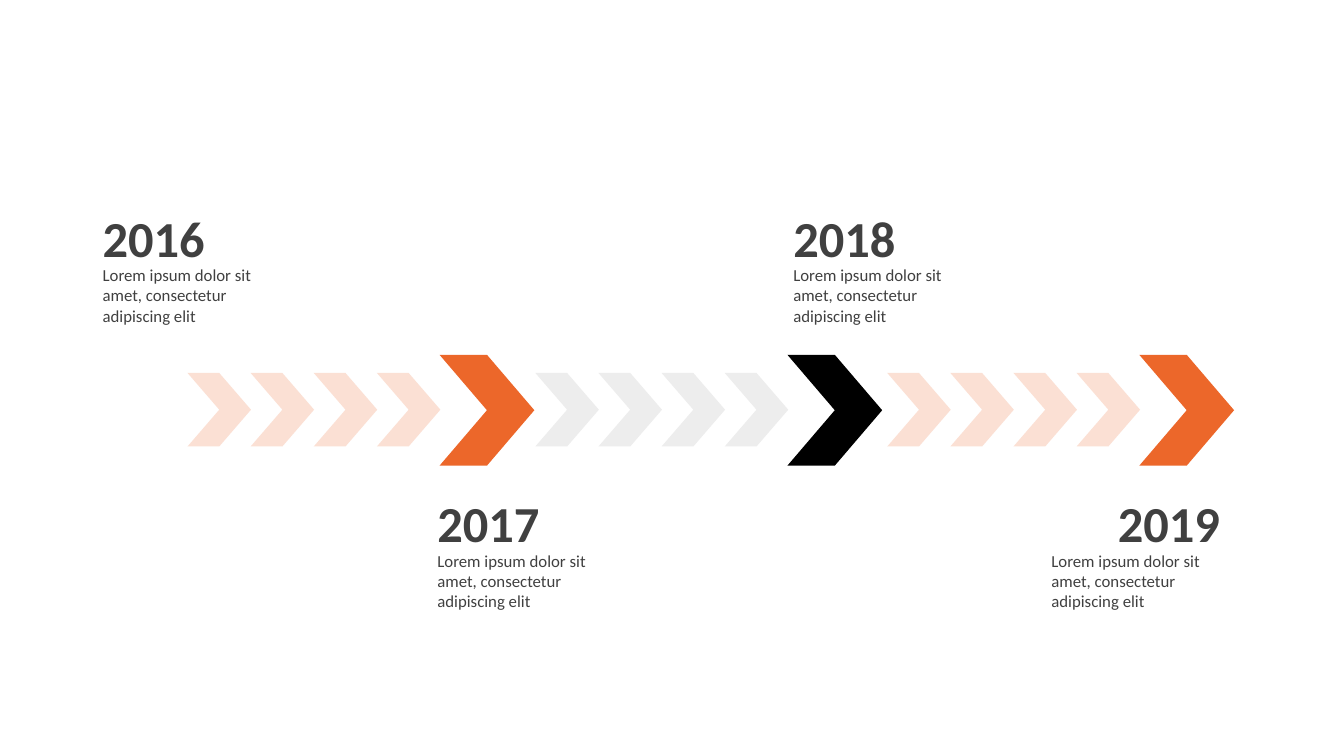
from lxml import etree
from pptx import Presentation
from pptx.dml.color import RGBColor
from pptx.enum import shapes, text
from pptx.oxml.ns import qn
from pptx.util import Inches, Pt

ORANGE = RGBColor(0xEC, 0x67, 0x2A)
BLACK = RGBColor(0x00, 0x00, 0x00)
GRAY = RGBColor(0xED, 0xED, 0xED)
DARK = RGBColor(0x40, 0x40, 0x40)
DESCRIPTION = "Lorem ipsum dolor sit amet, consectetur adipiscing elit"
STEP = 0.626

presentation = Presentation()
presentation.slide_width = Inches(13.33)
presentation.slide_height = Inches(7.5)
slide = presentation.slides.add_slide(presentation.slide_layouts[6])


def add_chevron(left, top, width, height, color, opacity=100):
    shape = slide.shapes.add_shape(
        shapes.MSO_SHAPE.CHEVRON, Inches(left), Inches(top), Inches(width), Inches(height)
    )
    shape.shadow.inherit = False
    shape.line.fill.background()
    shape.fill.solid()
    shape.fill.fore_color.rgb = color
    if opacity < 100:
        color_element = shape.fill._xPr.find(qn("a:solidFill"))[0]
        etree.SubElement(color_element, qn("a:alpha")).set("val", str(opacity * 1000))


def add_label(left, top, wording, size, bold, anchor, alignment):
    box = slide.shapes.add_textbox(Inches(left), Inches(top), Inches(1.87), Inches(0.71))
    frame = box.text_frame
    frame.text = wording
    frame.word_wrap = True
    frame.auto_size = text.MSO_AUTO_SIZE.SHAPE_TO_FIT_TEXT
    frame.vertical_anchor = anchor
    paragraph = frame.paragraphs[0]
    paragraph.alignment = alignment
    font = paragraph.runs[0].font
    font.name = "Calibri"
    font.size = Pt(size)
    font.bold = bold
    font.color.rgb = DARK


stages = [
    (1.86, 4.36, ORANGE, 20, ORANGE),
    (5.31, 7.81, GRAY, 100, BLACK),
    (8.8, 11.3, ORANGE, 20, ORANGE),
]
for small_left, large_left, small_color, opacity, large_color in stages:
    for index in range(4):
        add_chevron(small_left + index * STEP, 3.7, 0.63, 0.73, small_color, opacity)
    add_chevron(large_left, 3.52, 0.94, 1.1, large_color)

milestones = [
    ("2016", 0.92, 2, text.PP_ALIGN.LEFT),
    ("2017", 4.24, 4.83, text.PP_ALIGN.LEFT),
    ("2018", 7.77, 2, text.PP_ALIGN.LEFT),
    ("2019", 10.33, 4.83, text.PP_ALIGN.RIGHT),
]
for year, left, top, alignment in milestones:
    add_label(left, top, year, 36, True, text.MSO_ANCHOR.MIDDLE, alignment)
    add_label(left, top + 0.58, DESCRIPTION, 12, False, text.MSO_ANCHOR.TOP, text.PP_ALIGN.LEFT)

presentation.save("out.pptx")
